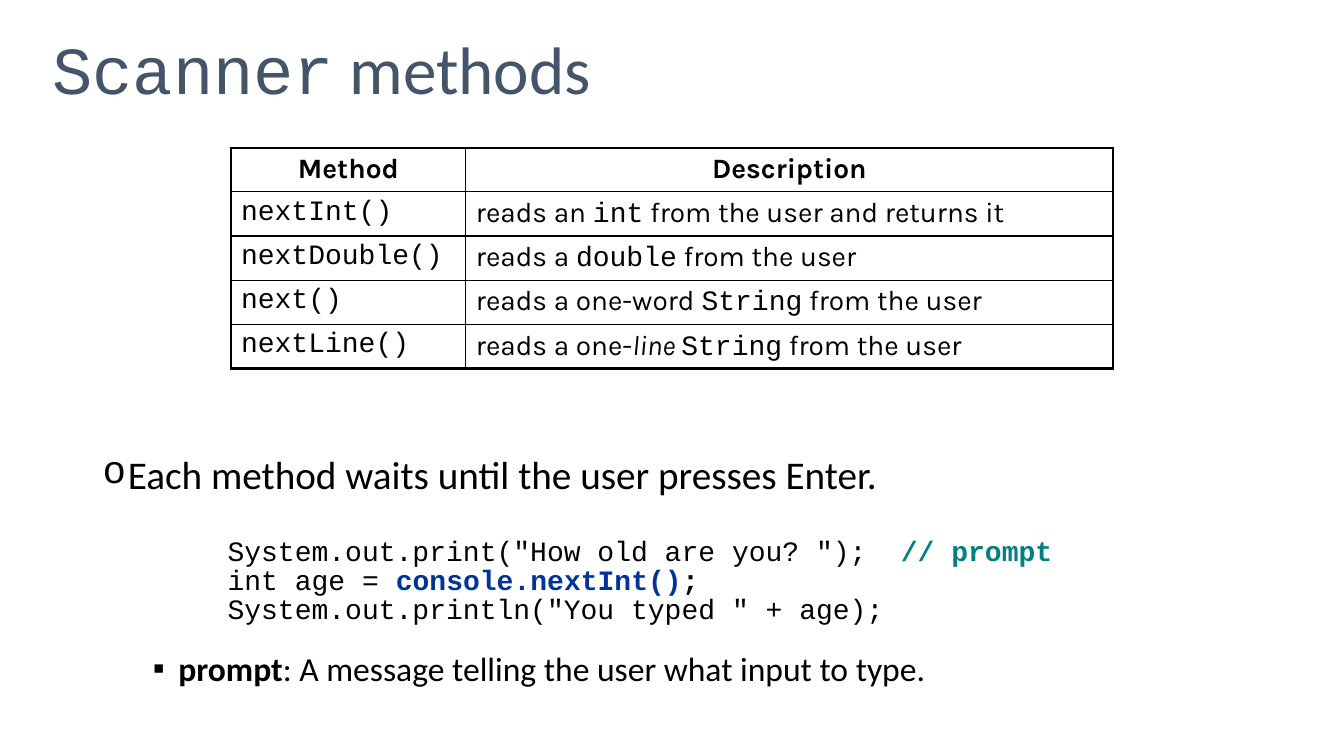
from dataclasses import dataclass

from lxml.etree import SubElement
from pptx import Presentation
from pptx.dml.color import RGBColor
from pptx.enum.text import MSO_ANCHOR, MSO_AUTO_SIZE, PP_ALIGN
from pptx.oxml.ns import qn
from pptx.util import Cm, Pt

COLORS = {"title": "44546A", "text": "000000", "comment": "008080", "call": "003399"}
PROSE, CODE, TABLE = "Calibri", "Courier New", "Karla"


@dataclass
class Piece:
    """A stretch of text with one look."""
    text: str
    font: str = PROSE
    color: str = "text"
    bold: bool = False
    italic: bool = False


class LessonSlide:
    """The style and the current slide of a programming lesson."""

    def __init__(self, deck):
        self.slide = deck.slides.add_slide(deck.slide_layouts[1])

    def add_pieces(self, paragraph, pieces, size):
        for piece in pieces:
            run = paragraph.add_run()
            run.text = piece.text
            font = run.font
            font.name, font.size = piece.font, Pt(size)
            font.bold, font.italic = piece.bold, piece.italic
            font.color.rgb = RGBColor.from_string(COLORS[piece.color])

    def place(self, holder, top, height):
        holder.left, holder.top = Cm(1.06), Cm(top)
        holder.width, holder.height = Cm(31.75), Cm(height)
        frame = holder.text_frame
        frame.word_wrap = True
        frame.auto_size = MSO_AUTO_SIZE.NONE
        return frame

    def title(self, pieces):
        frame = self.place(self.slide.shapes.title, 0, 3.68)
        frame.vertical_anchor = MSO_ANCHOR.MIDDLE
        heading = frame.paragraphs[0]
        heading.alignment = PP_ALIGN.LEFT
        heading.line_spacing = 0.9
        self.add_pieces(heading, pieces, 48)

    def body(self, top_inset):
        self.points = self.place(self.slide.placeholders[1], 3.68, 14.38)
        self.points.margin_top = Cm(top_inset)
        self.points.vertical_anchor = MSO_ANCHOR.TOP

    def point(self, pieces, size, before, spacing, indent, level=0, bullet=None):
        last = self.points.paragraphs[-1]
        line = self.points.add_paragraph() if last.runs else last
        line.level = level
        line.alignment = PP_ALIGN.LEFT
        line.line_spacing = spacing
        line.space_before, line.space_after = Pt(before), Pt(0)
        properties = line._p.get_or_add_pPr()
        properties.set("marL", str(Cm(indent)))
        properties.set("indent", str(Cm(-0.64 if bullet else 0)))
        if bullet:
            mark, face = bullet
            SubElement(properties, qn("a:buFont"), typeface=face)
            SubElement(properties, qn("a:buChar"), char=mark)
        else:
            SubElement(properties, qn("a:buNone"))
        self.add_pieces(line, pieces, size)

    def border(self, cell, side, width):
        properties = cell._tc.get_or_add_tcPr()
        edge = SubElement(properties, qn(f"a:ln{side}"), w=str(Pt(width)))
        fill = SubElement(edge, qn("a:solidFill"))
        SubElement(fill, qn("a:srgbClr"), val=COLORS["text"])

    def table(self, rows, widths, row_height):
        table = self.slide.shapes.add_table(
            len(rows), len(widths), Cm(5.82), Cm(3.73),
            Cm(sum(widths)), Cm(row_height * len(rows))).table
        table.first_row = table.horz_banding = False
        for column, width in zip(table.columns, widths):
            column.width = Cm(width)
        last_row, last_column = len(rows) - 1, len(widths) - 1
        for r, row in enumerate(rows):
            for c, pieces in enumerate(row):
                cell = table.cell(r, c)
                outer = {"L": c == 0, "R": c == last_column,
                         "T": r == 0, "B": r == last_row}
                for side, thick in outer.items():
                    self.border(cell, side, 2.25 if thick else 1)
                cell.fill.background()
                entry = cell.text_frame.paragraphs[0]
                entry.alignment = PP_ALIGN.LEFT if r else PP_ALIGN.CENTER
                self.add_pieces(entry, pieces, 20)


def method_row(method, lead, kind, rest, stress=""):
    """Return the cells that explain one method."""
    description = [Piece(lead, TABLE), Piece(stress, TABLE, italic=True),
                   Piece(kind, CODE), Piece(rest, TABLE)]
    return [[Piece(method, CODE)], [piece for piece in description if piece.text]]


def main():
    deck = Presentation()
    deck.slide_width, deck.slide_height = Cm(33.87), Cm(19.05)
    lesson = LessonSlide(deck)
    lesson.title([Piece("Scanner", CODE, "title"), Piece(" methods", color="title")])

    lesson.body(top_inset=7.89)
    lesson.point([Piece("Each method waits until the user presses Enter.")],
                 28, 0, 0.8, 1.91, bullet=("o", CODE))
    program = [
        [Piece('System.out.print("How old are you? ");  ', CODE),
         Piece("// prompt", CODE, "comment", bold=True)],
        [Piece("int age = ", CODE),
         Piece("console.nextInt()", CODE, "call", bold=True),
         Piece(";", CODE, bold=True)],
        [Piece('System.out.println("You typed " + age);', CODE)],
    ]
    for number, statement in enumerate(program):
        lesson.point(statement, 20, 6 if number else 35, 0.6, 4.42)
    lesson.point([Piece("prompt", bold=True),
                  Piece(": A message telling the user what input to type.")],
                 24, 23.5, 0.8, 3.18, level=1, bullet=("▪", "Arial"))

    header = [[Piece(name, TABLE, bold=True)] for name in ("Method", "Description")]
    lesson.table([
        header,
        method_row("nextInt()", "reads an ", "int", " from the user and returns it"),
        method_row("nextDouble()", "reads a ", "double", " from the user"),
        method_row("next()", "reads a one-word ", "String", " from the user"),
        method_row("nextLine()", "reads a one-", "String", " from the user", "line "),
    ], widths=(5.92, 16.31), row_height=1.1)
    deck.save("out.pptx")


if __name__ == "__main__":
    main()
